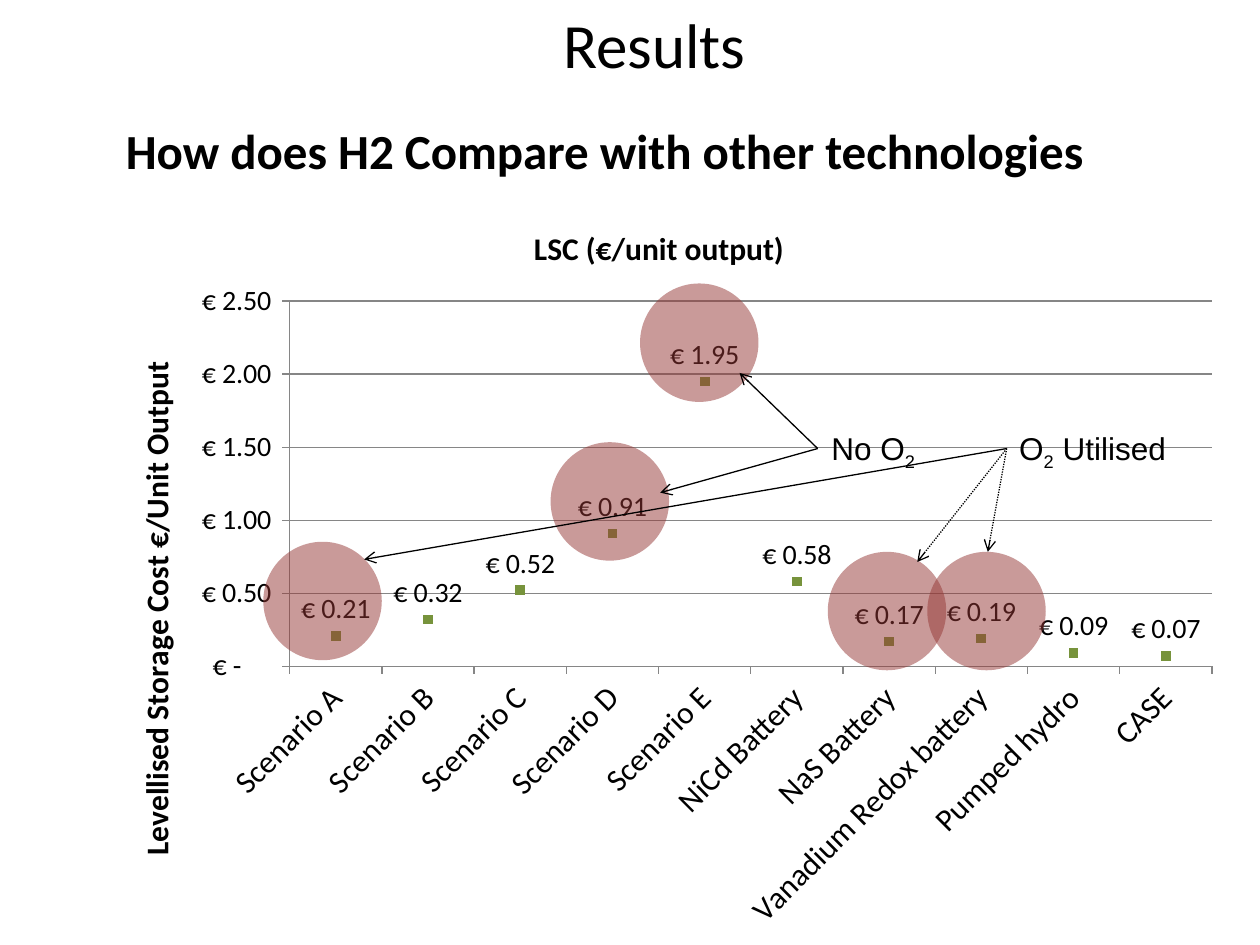
from lxml import etree
from pptx import Presentation
from pptx.chart.data import CategoryChartData
from pptx.dml.color import RGBColor
from pptx.enum.chart import XL_CHART_TYPE as CT, XL_LABEL_POSITION as LP
from pptx.enum.chart import XL_MARKER_STYLE as MS, XL_TICK_MARK as TM
from pptx.enum.dml import MSO_LINE
from pptx.enum.shapes import MSO_CONNECTOR, MSO_SHAPE
from pptx.enum.text import MSO_ANCHOR, PP_ALIGN
from pptx.oxml import parse_xml
from pptx.oxml.ns import nsdecls, qn
from pptx.util import Inches, Pt

COLORS = {"text": "000000", "circle": "953735", "marker": "77933C", "grid": "868686"}
TITLE = "Results"
SUBTITLE = "How does H2 Compare with other technologies"
CHART_TITLE = "LSC (€/unit output)"
AXIS_TITLE = "Levellised Storage Cost €/Unit Output"
EURO = r'_-[$€-2]\ * #,##0.00_-;\-[$€-2]\ * #,##0.00_-;_-[$€-2]\ * "-"??_-;_-@_-'
COSTS = {
    "Scenario A": 0.21, "Scenario B": 0.32, "Scenario C": 0.52,
    "Scenario D": 0.91, "Scenario E": 1.95, "NiCd Battery": 0.58,
    "NaS Battery": 0.17, "Vanadium Redox battery": 0.19,
    "Pumped hydro": 0.09, "CASE": 0.07,
}
DIAMETER = 0.94
CIRCLES = [(4.37, 3.51), (5.08, 2.25), (2.09, 4.3), (6.57, 4.38), (7.36, 4.38)]
NOTES = [
    {"box": (6.5, 3.36, 1.02, 0.4), "runs": [("No O", 0), ("2", 1)], "start": (6.49, 3.56),
     "arrows": [((5.87, 2.96), False), ((5.24, 3.91), False)]},
    {"box": (7.99, 3.36, 1.65, 0.4), "runs": [("O", 0), ("2", 1), (" Utilised", 0)],
     "start": (7.99, 3.56),
     "arrows": [((2.89, 4.44), False), ((7.28, 4.46), True), ((7.84, 4.38), True)]},
]


def rgb(name):
    return RGBColor.from_string(COLORS[name])


def style(font, size, name="Calibri", bold=False):
    for key, value in {"size": Pt(size), "name": name, "bold": bold}.items():
        setattr(font, key, value)
    font.color.rgb = rgb("text")


def add_text(s, box, runs, **fmt):
    tf = s.shapes.add_textbox(*map(Inches, box)).text_frame
    tf.word_wrap = True
    for text, sub in runs:
        r = tf.paragraphs[0].add_run()
        r.text = text
        style(r.font, **fmt)
        if sub:
            r.font._element.set("baseline", "-25000")


def add_circle(s, x, y):
    sp = s.shapes.add_shape(MSO_SHAPE.OVAL, *map(Inches, (x, y, DIAMETER, DIAMETER)))
    sp.shadow.inherit = False
    sp.fill.solid()
    sp.fill.fore_color.rgb = rgb("circle")
    sp.line.fill.background()
    color = sp._element.spPr.find(f"{qn('a:solidFill')}/{qn('a:srgbClr')}")
    etree.SubElement(color, qn("a:alpha"), val="50000")


def add_arrow(s, start, end, dotted):
    c = s.shapes.add_connector(MSO_CONNECTOR.STRAIGHT, *map(Inches, start + end))
    c.line.color.rgb = rgb("text")
    c.line.width = Pt(0.75)
    if dotted:
        c.line.dash_style = MSO_LINE.ROUND_DOT
    etree.SubElement(c.line._get_or_add_ln(), qn("a:tailEnd"), type="arrow")
    etree.SubElement(c._element.spPr, qn("a:effectLst"))


def set_layout(parent, index, **place):
    for old in parent.findall(qn("c:layout")):
        parent.remove(old)
    target = '<c:layoutTarget val="inner"/>' if "w" in place else ""
    modes = "".join(f'<c:{k}Mode val="edge"/>' for k in "xy")
    values = "".join(f'<c:{k} val="{v}"/>' for k, v in place.items())
    parent.insert(index, parse_xml(
        f'<c:layout {nsdecls("c")}><c:manualLayout>{target}{modes}{values}'
        "</c:manualLayout></c:layout>"))


def set_title(owner, text, x, y):
    tf = getattr(owner, "chart_title", None) or owner.axis_title
    p = tf.text_frame.paragraphs[0]
    r = p.add_run()
    r.text = text
    style(r.font, 18, bold=True)
    set_layout(tf._element, 1, x=x, y=y)


def add_cost_chart(s):
    data = CategoryChartData()
    data.categories = list(COSTS)
    data.add_series("Series 1", list(COSTS.values()))
    box = map(Inches, (0.75, 1.51, 9.06, 5.99))
    chart = s.shapes.add_chart(CT.LINE_MARKERS, *box, data).chart
    style(chart.font, 10)
    chart.has_legend = False
    chart.has_title = True
    set_title(chart, CHART_TITLE, 0.38, 0.04)

    cat, val = chart.category_axis, chart.value_axis
    for axis, size in ((cat, 18), (val, 16)):
        style(axis.tick_labels.font, size)
        axis.major_tick_mark = TM.OUTSIDE
        axis.format.line.color.rgb = rgb("grid")
    chart.element.xpath(".//c:catAx/c:txPr/a:bodyPr")[0].set("rot", "-2700000")
    val.minimum_scale, val.maximum_scale, val.major_unit = 0, 2.5, 0.5
    val.tick_labels.number_format = EURO
    val.tick_labels.number_format_is_linked = False
    val.major_gridlines.format.line.color.rgb = rgb("grid")
    val.has_title = True
    set_title(val, AXIS_TITLE, 0.03, 0.22)
    val.axis_title.text_frame._txBody.bodyPr.set("rot", "-5400000")
    set_layout(chart.element.xpath(".//c:plotArea")[0], 0, x=0.171, y=0.147, w=0.808, h=0.484)

    series = chart.plots[0].series[0]
    series.smooth = False
    series.format.line.fill.background()
    marker = series.marker
    marker.style, marker.size = MS.SQUARE, 5
    marker.format.fill.solid()
    marker.format.fill.fore_color.rgb = rgb("marker")
    marker.format.line.fill.background()
    labels = series.data_labels
    style(labels.font, 16)
    for key, value in {"show_value": True, "position": LP.ABOVE, "number_format": EURO,
                       "number_format_is_linked": False}.items():
        setattr(labels, key, value)
    chart.plots[0].vary_by_categories = False


def main():
    prs = Presentation()
    prs.slide_width, prs.slide_height = Inches(10), Inches(7.5)
    s = prs.slides.add_slide(prs.slide_layouts[5])
    add_cost_chart(s)
    title = s.shapes.title
    title.left, title.top, title.width, title.height = map(Inches, (2.42, 0, 5.55, 0.68))
    tf = title.text_frame
    tf.text = TITLE
    tf.vertical_anchor = MSO_ANCHOR.MIDDLE
    tf.paragraphs[0].alignment = PP_ALIGN.CENTER
    style(tf.paragraphs[0].runs[0].font, 36)
    add_text(s, (0.9, 0.91, 8.66, 0.57), [(SUBTITLE, 0)], size=28, bold=True)
    for x, y in CIRCLES:
        add_circle(s, x, y)
    for note in NOTES:
        add_text(s, note["box"], note["runs"], size=18, name="Arial")
        for end, dotted in note["arrows"]:
            add_arrow(s, note["start"], end, dotted)
    prs.save("out.pptx")


if __name__ == "__main__":
    main()
